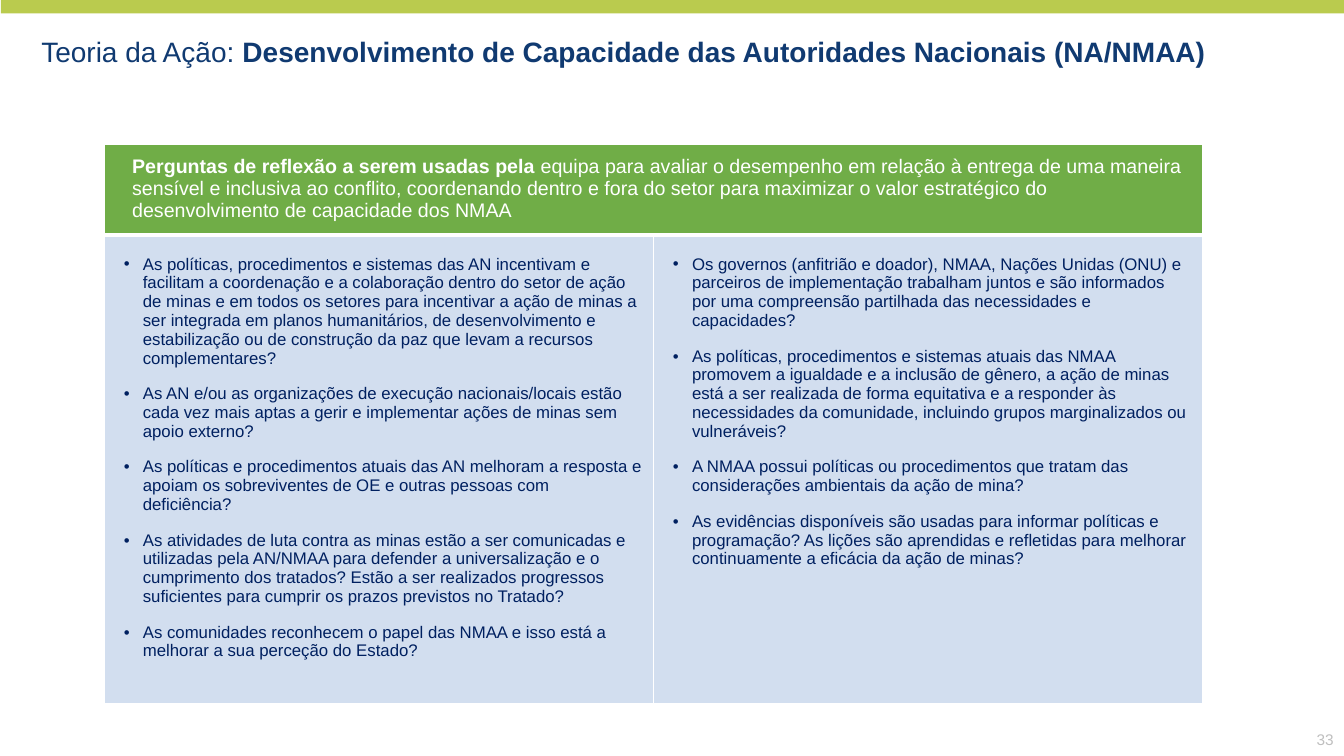
"""Build the slide on national authority capacity development."""
from dataclasses import dataclass

from lxml import etree
from pptx import Presentation
from pptx.dml.color import RGBColor
from pptx.enum.shapes import MSO_SHAPE
from pptx.enum.text import MSO_ANCHOR, MSO_AUTO_SIZE, PP_ALIGN
from pptx.oxml.ns import qn
from pptx.util import Cm, Pt

RECT = MSO_SHAPE.RECTANGLE
TOP, MIDDLE = MSO_ANCHOR.TOP, MSO_ANCHOR.MIDDLE
LEFT, RIGHT = PP_ALIGN.LEFT, PP_ALIGN.RIGHT
NO_AUTOSIZE = MSO_AUTO_SIZE.NONE

FONT = "Arial"
WHITE, LIME, GREEN, PALE_BLUE = "FFFFFF", "BACB4E", "70AD47", "D2DEEF"
TITLE_BLUE, NAVY, GREY = "103A71", "002060", "BFBFBF"
BULLET_INDENT = 0.48


@dataclass
class Column:
    """Reflection questions of one table column."""
    index: int
    questions: list[str]


COLUMNS = [
    Column(0, [
        "As políticas, procedimentos e sistemas das AN incentivam e facilitam a coordenação e a "
        "colaboração dentro do setor de ação de minas e em todos os setores para incentivar a ação "
        "de minas a ser integrada em planos humanitários, de desenvolvimento e estabilização ou de "
        "construção da paz que levam a recursos complementares?",
        "As AN e/ou as organizações de execução nacionais/locais estão cada vez mais aptas a gerir "
        "e implementar ações de minas sem apoio externo?",
        "As políticas e procedimentos atuais das AN melhoram a resposta e apoiam os sobreviventes "
        "de OE e outras pessoas com deficiência?",
        "As atividades de luta contra as minas estão a ser comunicadas e utilizadas pela AN/NMAA "
        "para defender a universalização e o cumprimento dos tratados? Estão a ser realizados "
        "progressos suficientes para cumprir os prazos previstos no Tratado?",
        "As comunidades reconhecem o papel das NMAA e isso está a melhorar a sua perceção do "
        "Estado?",
    ]),
    Column(1, [
        "Os governos (anfitrião e doador), NMAA, Nações Unidas (ONU) e parceiros de implementação "
        "trabalham juntos e são informados por uma compreensão partilhada das necessidades e "
        "capacidades?",
        "As políticas, procedimentos e sistemas atuais das NMAA promovem a igualdade e a inclusão "
        "de gênero, a ação de minas está a ser realizada de forma equitativa e a responder às "
        "necessidades da comunidade, incluindo grupos marginalizados ou vulneráveis?",
        "A NMAA possui políticas ou procedimentos que tratam das considerações ambientais da ação "
        "de mina?",
        "As evidências disponíveis são usadas para informar políticas e programação? As lições são "
        "aprendidas e refletidas para melhorar continuamente a eficácia da ação de minas?",
    ]),
]


def rgb(color: str) -> RGBColor:
    """Turn a hex string into a colour."""
    return RGBColor.from_string(color)


def add_text(p, text: str, *, size: float, color: str, bold: bool = False) -> None:
    """Append a formatted run to a paragraph."""
    r = p.add_run()
    r.text = text
    r.font.name = FONT
    r.font.size = Pt(size)
    r.font.bold = bold
    r.font.color.rgb = rgb(color)


def set_bullet(p) -> None:
    """Give a paragraph a hanging round bullet."""
    pPr = p._p.get_or_add_pPr()
    pPr.set("marL", str(Cm(BULLET_INDENT)))
    pPr.set("indent", str(-Cm(BULLET_INDENT)))
    etree.SubElement(pPr, qn("a:buFont")).set("typeface", FONT)
    etree.SubElement(pPr, qn("a:buChar")).set("char", "•")


def format_cell(cell, fill: str, margins: tuple[float, ...], bottom: float = 1) -> None:
    """Set the borders, fill and margins of a cell."""
    tcPr = cell._tc.get_or_add_tcPr()
    for side, width in (("L", 1), ("R", 1), ("T", 1), ("B", bottom)):
        ln = etree.SubElement(tcPr, qn(f"a:ln{side}"), w=str(Pt(width)))
        solid = etree.SubElement(ln, qn("a:solidFill"))
        etree.SubElement(solid, qn("a:srgbClr"), val=WHITE)
    cell.fill.solid()
    cell.fill.fore_color.rgb = rgb(fill)
    cell.vertical_anchor = TOP
    (cell.margin_left, cell.margin_top,
     cell.margin_right, cell.margin_bottom) = map(Cm, margins)


def add_band(s) -> None:
    """Draw the lime band along the top edge."""
    sp = s.shapes.add_shape(RECT, Cm(0.02), Cm(-0.02), Cm(33.86), Cm(0.36))
    sp.shadow.inherit = False
    sp.fill.solid()
    sp.fill.fore_color.rgb = rgb(LIME)
    sp.line.fill.background()


def add_title(s) -> None:
    """Fill and place the title placeholder."""
    sp = s.shapes.title
    sp.left, sp.top, sp.width, sp.height = Cm(1.04), Cm(0.86), Cm(31.65), Cm(2.24)
    tf = sp.text_frame
    tf.margin_left = tf.margin_top = tf.margin_right = tf.margin_bottom = 0
    tf.vertical_anchor = TOP
    tf.word_wrap = True
    tf.auto_size = NO_AUTOSIZE
    p = tf.paragraphs[0]
    p.alignment = LEFT
    add_text(p, "Teoria da Ação: ", size=20, color=TITLE_BLUE)
    add_text(p, "Desenvolvimento de Capacidade das Autoridades Nacionais (NA/NMAA)",
             size=20, color=TITLE_BLUE, bold=True)


def add_questions(s) -> None:
    """Add the table of reflection questions."""
    table = s.shapes.add_table(2, 2, Cm(2.62), Cm(3.63), Cm(27.68), Cm(14.1)).table
    for row, height in zip(table.rows, (2.29, 11.81)):
        row.height = Cm(height)
    for cell in table.rows[0].cells:
        format_cell(cell, GREEN, (0.71, 0.3, 0.25, 0.3), bottom=3)
    header = table.cell(0, 0)
    header.merge(table.cell(0, 1))
    p = header.text_frame.paragraphs[0]
    add_text(p, "Perguntas de reflexão a serem usadas pela ", size=14, color=WHITE, bold=True)
    add_text(p, "equipa para avaliar o desempenho em relação à entrega de uma maneira sensível e "
             "inclusiva ao conflito, coordenando dentro e fora do setor para maximizar o valor "
             "estratégico do desenvolvimento de capacidade dos NMAA", size=14, color=WHITE)
    for column in COLUMNS:
        cell = table.cell(1, column.index)
        format_cell(cell, PALE_BLUE, (0.5, 0.5, 0.25, 0.13))
        tf = cell.text_frame
        for i, question in enumerate(column.questions):
            p = tf.add_paragraph() if i else tf.paragraphs[0]
            p.space_after = Pt(12)
            set_bullet(p)
            add_text(p, question, size=12, color=NAVY)


def add_page_number(s) -> None:
    """Put the page number in the bottom right corner."""
    tf = s.shapes.add_textbox(Cm(32.69), Cm(18.21), Cm(1.17), Cm(0.84)).text_frame
    tf.word_wrap = True
    tf.vertical_anchor = MIDDLE
    p = tf.paragraphs[0]
    p.alignment = RIGHT
    add_text(p, "33", size=11, color=GREY)


def main() -> None:
    """Build and save the presentation."""
    prs = Presentation()
    prs.slide_width, prs.slide_height = Cm(33.87), Cm(19.05)
    s = prs.slides.add_slide(prs.slide_layouts[5])
    add_band(s)
    add_questions(s)
    add_title(s)
    add_page_number(s)
    prs.save("out.pptx")


if __name__ == "__main__":
    main()
